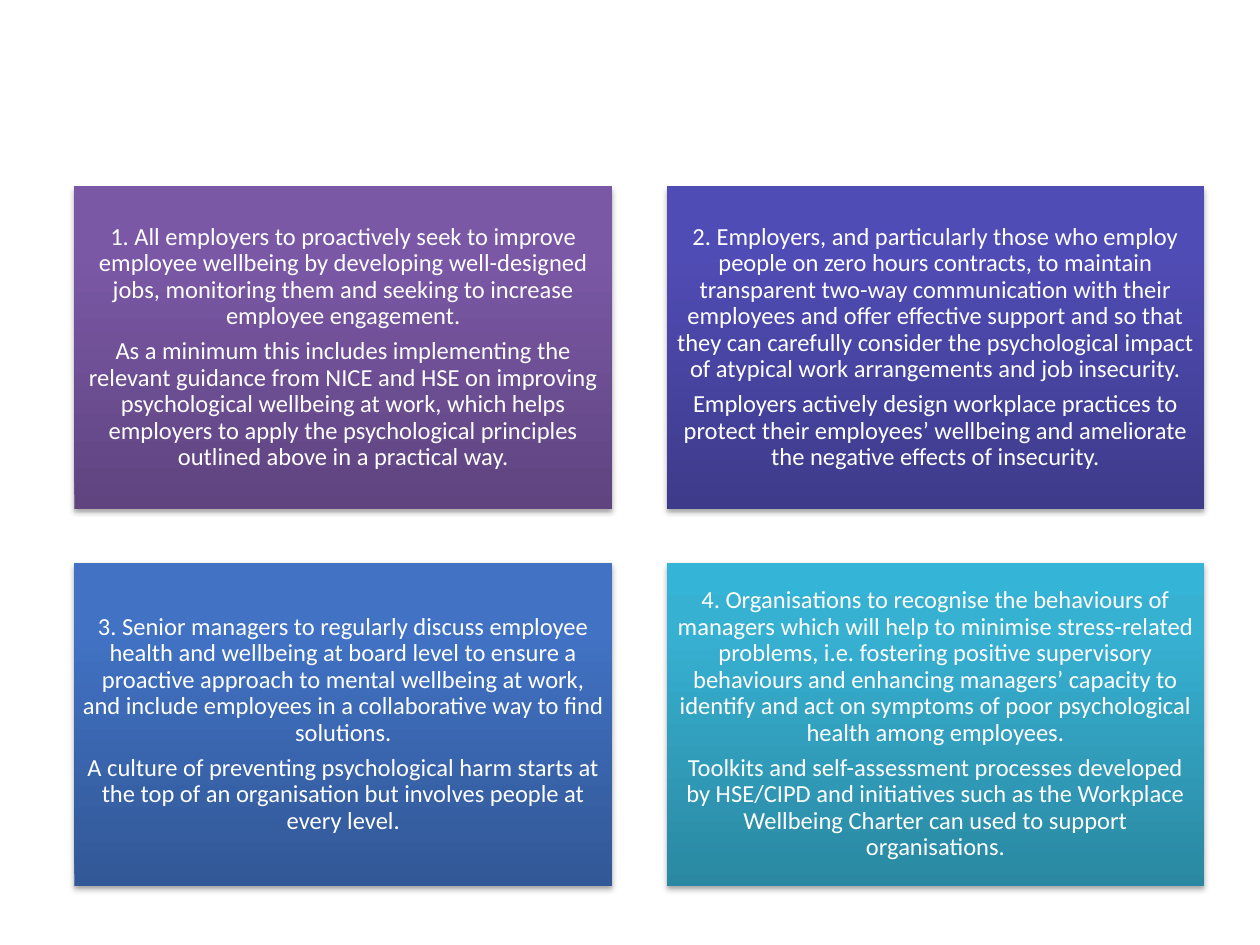
from copy import deepcopy

from lxml import etree
from pptx import Presentation
from pptx.dml.color import RGBColor
from pptx.enum.shapes import MSO_SHAPE
from pptx.enum.text import MSO_ANCHOR, PP_ALIGN
from pptx.oxml.ns import qn
from pptx.util import Inches, Pt

RECTANGLE = MSO_SHAPE.RECTANGLE
MIDDLE = MSO_ANCHOR.MIDDLE
CENTER = PP_ALIGN.CENTER

# Card grid, in inches
LEFT, TOP = 0.59, 1.48
CARD_W, CARD_H = 4.27, 2.56
GAP = 0.43
COLUMNS = 2

FONT, FONT_SIZE = "Calibri", 14
STOP_POSITIONS = (0, 0.8, 1)

# Gradients run from the bottom of a card to its top
COLORS = {
    "text": "FFFFFF",
    "shadow": "000000",
    "purple": ("5F4480", "7B58A6", "7C57A8"),
    "indigo": ("3E3B8B", "504CB5", "4F4BB8"),
    "blue": ("325897", "4172C4", "3F72C7"),
    "teal": ("2A88A2", "37B1D2", "34B4D6"),
}

RECOMMENDATIONS = [
    ("purple", [
        "1. All employers to proactively seek to improve employee wellbeing by "
        "developing well-designed jobs, monitoring them and seeking to increase "
        "employee engagement.",
        "As a minimum this includes implementing the relevant guidance from NICE "
        "and HSE on improving psychological wellbeing at work, which helps "
        "employers to apply the psychological principles outlined above in a "
        "practical way.",
    ]),
    ("indigo", [
        "2. Employers, and particularly those who employ people on zero hours "
        "contracts, to maintain transparent two-way communication with their "
        "employees and offer effective support and so that they can carefully "
        "consider the psychological impact of atypical work arrangements and job "
        "insecurity.",
        "Employers actively design workplace practices to protect their "
        "employees’ wellbeing and ameliorate the negative effects of insecurity.",
    ]),
    ("blue", [
        "3. Senior managers to regularly discuss employee health and wellbeing at "
        "board level to ensure a proactive approach to mental wellbeing at work, "
        "and include employees in a collaborative way to find solutions.",
        "A culture of preventing psychological harm starts at the top of an "
        "organisation but involves people at every level.",
    ]),
    ("teal", [
        "4. Organisations to recognise the behaviours of managers which will help "
        "to minimise stress-related problems, i.e. fostering positive supervisory "
        "behaviours and enhancing managers’ capacity to identify and act on "
        "symptoms of poor psychological health among employees.",
        "Toolkits and self-assessment processes developed by HSE/CIPD and "
        "initiatives such as the Workplace Wellbeing Charter can used to support "
        "organisations.",
    ]),
]


def fill_gradient(card, colors):
    """Fill a card with a vertical gradient of three stops."""
    card.fill.gradient()
    card.fill.gradient_angle = 90
    last_stop = card._element.spPr.findall(".//" + qn("a:gs"))[-1]
    last_stop.addnext(deepcopy(last_stop))
    for stop, position, color in zip(card.fill.gradient_stops, STOP_POSITIONS, colors):
        stop.position = position
        stop.color.rgb = RGBColor.from_string(color)


def add_shadow(card):
    """Cast a soft shadow straight down."""
    card.shadow.inherit = False
    effects = card._element.spPr.find(qn("a:effectLst"))
    shadow = etree.SubElement(effects, qn("a:outerShdw"), blurRad=str(Pt(3.1)),
                              dist=str(Pt(1.8)), dir="5400000", rotWithShape="0")
    color = etree.SubElement(shadow, qn("a:srgbClr"), val=COLORS["shadow"])
    etree.SubElement(color, qn("a:alpha"), val="35000")


def write_text(card, paragraphs):
    frame = card.text_frame
    frame.word_wrap = True
    frame.vertical_anchor = MIDDLE
    frame.margin_left = frame.margin_right = Inches(0.06)
    frame.margin_top = frame.margin_bottom = Inches(0.06)
    for index, text in enumerate(paragraphs):
        paragraph = frame.add_paragraph() if index else frame.paragraphs[0]
        paragraph.alignment = CENTER
        paragraph.line_spacing = 0.9
        paragraph.space_after = Pt(0.35 * FONT_SIZE)
        run = paragraph.add_run()
        run.text = text
        run.font.name = FONT
        run.font.size = Pt(FONT_SIZE)
        run.font.color.rgb = RGBColor.from_string(COLORS["text"])


def add_card(slide, index, color_name, paragraphs):
    row, column = divmod(index, COLUMNS)
    card = slide.shapes.add_shape(
        RECTANGLE,
        Inches(LEFT + column * (CARD_W + GAP)), Inches(TOP + row * (CARD_H + GAP)),
        Inches(CARD_W), Inches(CARD_H))
    card.line.fill.background()
    fill_gradient(card, COLORS[color_name])
    add_shadow(card)
    write_text(card, paragraphs)


def main():
    presentation = Presentation()
    presentation.slide_width, presentation.slide_height = Inches(10), Inches(7.5)
    slide = presentation.slides.add_slide(presentation.slide_layouts[6])

    # Four recommendations, two to a row
    for index, (color_name, paragraphs) in enumerate(RECOMMENDATIONS):
        add_card(slide, index, color_name, paragraphs)

    presentation.save("out.pptx")


if __name__ == "__main__":
    main()
